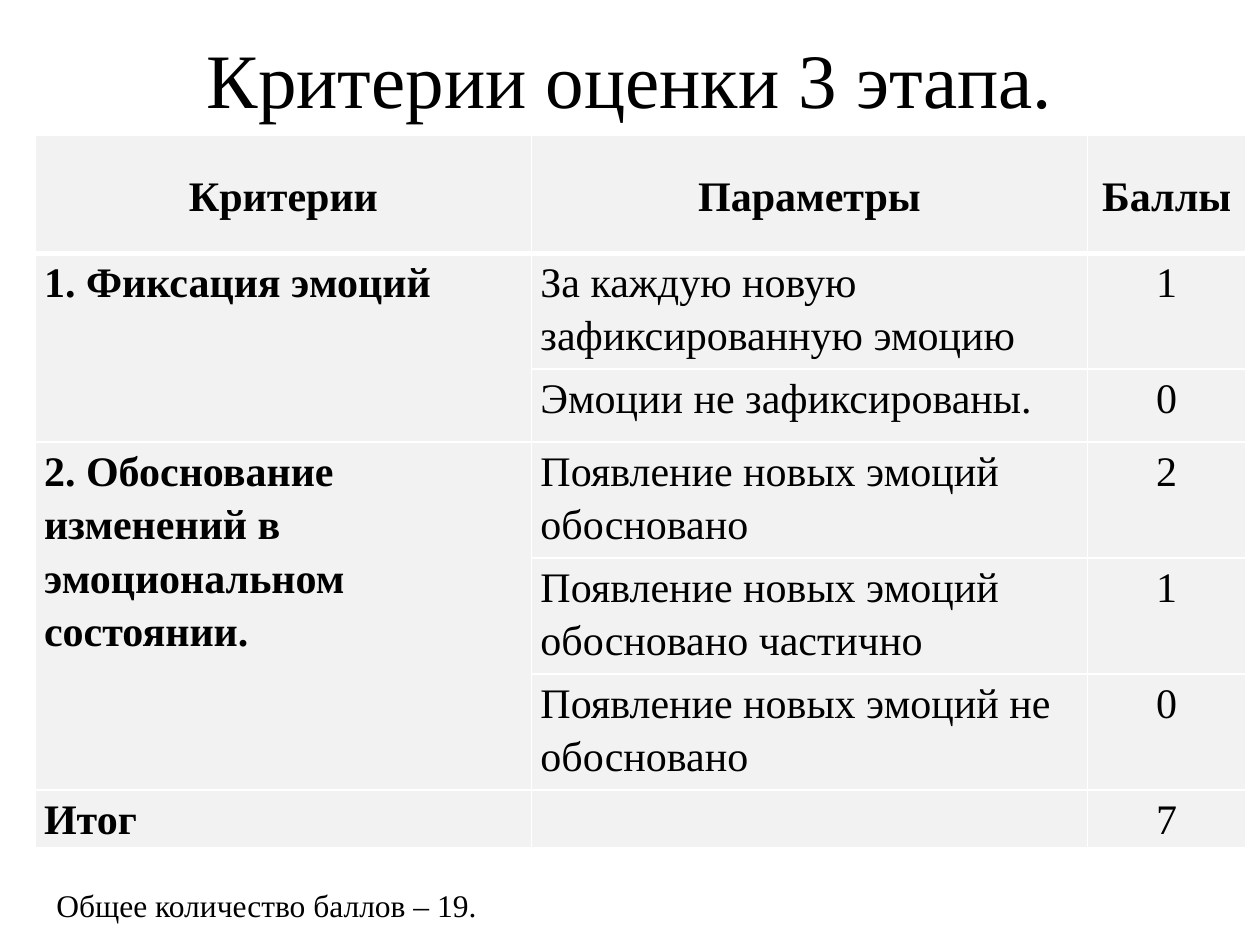
from dataclasses import dataclass

from lxml import etree
from pptx import Presentation
from pptx import util as u
from pptx.dml.color import RGBColor
from pptx.enum import text
from pptx.oxml.ns import qn


@dataclass(frozen=True)
class Theme:
    font: str = "Times New Roman"
    ink: str = "000000"
    background: str = "FFFFFF"
    cell: str = "F2F2F2"
    title_size: int = 44
    table_size: int = 24
    note_size: int = 18
    line_spacing: float = 1.15
    thin: int = 1
    thick: int = 3


COLUMN_WIDTHS = (3.94, 4.41, 1.26)
ROW_HEIGHTS = (0.94, 0.58, 0.58, 0.58, 0.61, 0.61, 0.28)
ROWS = (
    ("Критерии", "Параметры", "Баллы"),
    ("1. Фиксация эмоций", "За каждую новую зафиксированную эмоцию", "1"),
    ("", "Эмоции не зафиксированы.", "0"),
    ("2. Обоснование изменений в эмоциональном состоянии.",
     "Появление новых эмоций обосновано", "2"),
    ("", "Появление новых эмоций обосновано частично", "1"),
    ("", "Появление новых эмоций не обосновано", "0"),
    ("Итог", "", "7"),
)
CRITERION_SPANS = ((1, 2), (3, 5))


def set_attributes(target, values):
    for name, value in values.items():
        setattr(target, name, value)


class SlideBuilder:
    def __init__(self, slide, theme):
        self.slide = slide
        self.theme = theme
        self.fill(slide.background, theme.background)

    def fill(self, target, color):
        target.fill.solid()
        target.fill.fore_color.rgb = RGBColor.from_string(color)

    def add_words(self, paragraph, words, size, bold=False, **layout):
        set_attributes(paragraph, layout)
        paragraph.font.size = u.Pt(size)
        if not words:
            return
        run = paragraph.add_run()
        run.text = words
        set_attributes(run.font, {
            "name": self.theme.font, "size": u.Pt(size), "bold": bold})
        run.font.color.rgb = RGBColor.from_string(self.theme.ink)

    def text_box(self, box, words, size, alignment=text.PP_ALIGN.LEFT, **frame):
        shape = self.slide.shapes.add_textbox(*map(u.Inches, box))
        set_attributes(shape.text_frame, frame)
        self.add_words(shape.text_frame.paragraphs[0], words, size, alignment=alignment)

    def borders(self, cell, top, bottom):
        properties = cell._tc.get_or_add_tcPr()
        widths = {"L": self.theme.thin, "R": self.theme.thin, "T": top, "B": bottom}
        for side, width in widths.items():
            line = etree.SubElement(properties, qn(f"a:ln{side}"), w=str(u.Pt(width)))
            solid = etree.SubElement(line, qn("a:solidFill"))
            etree.SubElement(solid, qn("a:srgbClr"), val=self.theme.background)

    def table_cell(self, cell, words, row, column):
        theme = self.theme
        header = row == 0
        centered = header or column == len(COLUMN_WIDTHS) - 1
        self.borders(cell,
                     top=theme.thick if row == 1 else theme.thin,
                     bottom=theme.thick if header else theme.thin)
        self.fill(cell, theme.cell)
        set_attributes(cell, {
            "margin_left": u.Inches(0.07), "margin_right": u.Inches(0.07),
            "margin_top": 0, "margin_bottom": 0,
            "vertical_anchor": text.MSO_ANCHOR.MIDDLE if header else text.MSO_ANCHOR.TOP,
        })
        self.add_words(cell.text_frame.paragraphs[0], words, theme.table_size,
                       bold=header or column == 0,
                       alignment=text.PP_ALIGN.CENTER if centered else text.PP_ALIGN.LEFT,
                       line_spacing=theme.line_spacing)

    def table(self, box, rows, spans):
        frame = self.slide.shapes.add_table(
            len(rows), len(COLUMN_WIDTHS), *map(u.Inches, box))
        table = frame.table
        for column, width in zip(table.columns, COLUMN_WIDTHS):
            column.width = u.Inches(width)
        for row, height in zip(table.rows, ROW_HEIGHTS):
            row.height = u.Inches(height)
        for row, values in enumerate(rows):
            for column, words in enumerate(values):
                self.table_cell(table.cell(row, column), words, row, column)
        for first, last in spans:
            table.cell(first, 0).merge(table.cell(last, 0))
        frame.height = u.Inches(box[3])


def main():
    presentation = Presentation()
    set_attributes(presentation, {
        "slide_width": u.Inches(10), "slide_height": u.Inches(7.5)})
    theme = Theme()
    builder = SlideBuilder(
        presentation.slides.add_slide(presentation.slide_layouts[6]), theme)

    builder.text_box((0.75, -0.19, 8.5, 1.61), "Критерии оценки 3 этапа.",
                     theme.title_size, text.PP_ALIGN.CENTER,
                     word_wrap=True, vertical_anchor=text.MSO_ANCHOR.MIDDLE)
    builder.table((0.28, 1.07, 9.61, 5.66), ROWS, CRITERION_SPANS)
    builder.text_box((0.35, 6.98, 3.6, 0.4), "Общее количество баллов – 19.",
                     theme.note_size, word_wrap=False,
                     auto_size=text.MSO_AUTO_SIZE.SHAPE_TO_FIT_TEXT)
    presentation.save("out.pptx")


if __name__ == "__main__":
    main()
